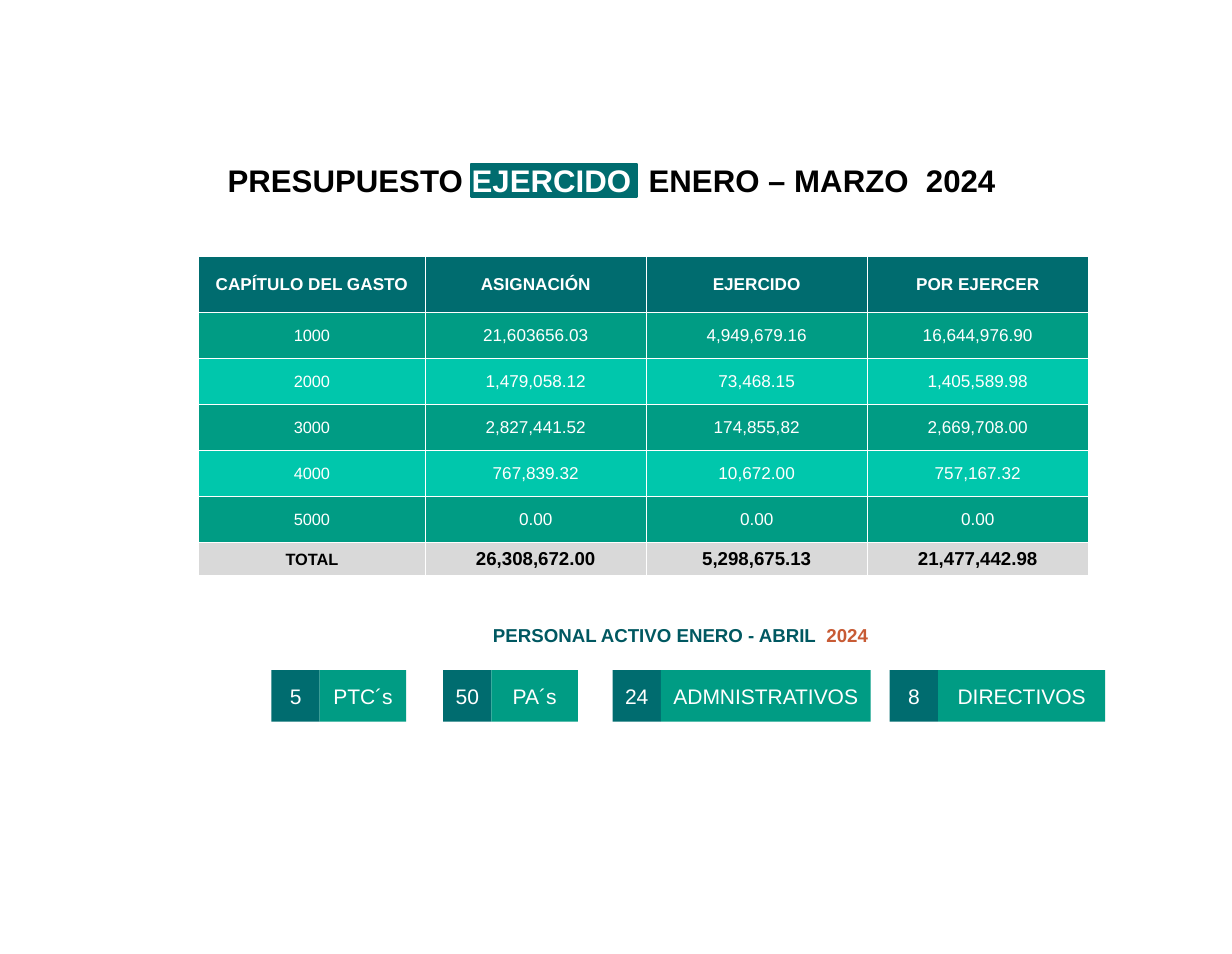
from lxml.etree import SubElement
from pptx import Presentation
from pptx.dml.color import RGBColor
from pptx.enum.shapes import MSO_SHAPE
from pptx.enum.text import MSO_ANCHOR, PP_ALIGN
from pptx.oxml.ns import qn
from pptx.util import Inches, Pt

WHITE, BLACK, GRAY = "FFFFFF", "000000", "D9D9D9"
TEAL, GREEN, MINT = "006C6F", "009C84", "00C7AC"

TITLE = [("PRESUPUESTO ", BLACK), ("EJERCIDO", WHITE), ("  ENERO – MARZO  2024", BLACK)]
STAFF_TITLE = [("PERSONAL ACTIVO ENERO - ABRIL  ", "005861"), ("2024", "C85B35")]
BUDGET = [
    ("CAPÍTULO DEL GASTO", "ASIGNACIÓN", "EJERCIDO", "POR EJERCER"),
    ("1000", "21,603656.03", "4,949,679.16", "16,644,976.90"),
    ("2000", "1,479,058.12", "73,468.15", "1,405,589.98"),
    ("3000", "2,827,441.52", "174,855,82", "2,669,708.00"),
    ("4000", "767,839.32", "10,672.00", "757,167.32"),
    ("5000", "0.00", "0.00", "0.00"),
    ("TOTAL", "26,308,672.00", "5,298,675.13", "21,477,442.98"),
]
COLUMNS = [2.02] + [1.97] * 3
ROWS = [0.5] + [0.41] * 5 + [0.3]
STAFF = [
    ("5", "PTC´s", 2.42, 0.77),
    ("50", "PA´s", 3.95, 0.77),
    ("24", "ADMNISTRATIVOS", 5.46, 1.87),
    ("8", "DIRECTIVOS", 7.93, 1.49),
]
STAFF_TOP, STAFF_HEIGHT, COUNT_WIDTH = 5.97, 0.46, 0.43


def color(value):
    return RGBColor.from_string(value)


def assign(target, values):
    for name, value in values.items():
        setattr(target, name, value)


def write(para, spans, size, bold=False, align=PP_ALIGN.CENTER):
    para.alignment = align
    for text, tint in spans:
        span = para.add_run()
        span.text = text
        assign(span.font, {"name": "Arial", "size": Pt(size), "bold": bold})
        span.font.color.rgb = color(tint)


def add_box(page, area, fill):
    box = page.shapes.add_shape(MSO_SHAPE.RECTANGLE, *map(Inches, area))
    box.shadow.inherit = False
    box.fill.solid()
    box.fill.fore_color.rgb = color(fill)
    box.line.fill.background()
    return box


def add_heading(page, area, spans, size, align, anchor):
    frame = page.shapes.add_textbox(*map(Inches, area)).text_frame
    assign(frame, {"word_wrap": True, "vertical_anchor": anchor})
    write(frame.paragraphs[0], spans, size, True, align)


def add_borders(cell):
    properties = cell._tc.get_or_add_tcPr()
    for side in ("lnL", "lnR", "lnT", "lnB"):
        line = SubElement(properties, qn(f"a:{side}"), w=str(Pt(0.5)))
        SubElement(SubElement(line, qn("a:solidFill")), qn("a:srgbClr"), val=WHITE)


def cell_style(row, column):
    if row == 0:
        return TEAL, WHITE, 11, True
    if row == len(BUDGET) - 1:
        return GRAY, BLACK, 12 if column else 10.5, True
    return (GREEN if row % 2 else MINT), WHITE, 11 if column else 10.5, False


def add_budget(page):
    area = (1.77, 2.28, sum(COLUMNS), sum(ROWS))
    table = page.shapes.add_table(len(ROWS), len(COLUMNS), *map(Inches, area)).table
    for column, width in zip(table.columns, COLUMNS):
        column.width = Inches(width)
    for row, height in zip(table.rows, ROWS):
        row.height = Inches(height)
    margins = {f"margin_{side}": Inches(0.01) for side in ("left", "right", "top")}
    for row, values in enumerate(BUDGET):
        for column, value in enumerate(values):
            fill, tint, size, bold = cell_style(row, column)
            cell = table.cell(row, column)
            assign(cell, {**margins, "margin_bottom": 0, "vertical_anchor": MSO_ANCHOR.MIDDLE})
            add_borders(cell)
            cell.fill.solid()
            cell.fill.fore_color.rgb = color(fill)
            write(cell.text_frame.paragraphs[0], [(value, tint)], size, bold)


def add_staff(page):
    margins = {f"margin_{side}": 0 for side in ("left", "right", "top", "bottom")}
    for count, label, left, width in STAFF:
        parts = [(count, left, COUNT_WIDTH, TEAL), (label, left + COUNT_WIDTH, width, GREEN)]
        for text, start, span_width, fill in parts:
            box = add_box(page, (start, STAFF_TOP, span_width, STAFF_HEIGHT), fill)
            assign(box.text_frame, {**margins, "vertical_anchor": MSO_ANCHOR.MIDDLE})
            write(box.text_frame.paragraphs[0], [(text, WHITE)], 13.5)


def main():
    deck = Presentation()
    assign(deck, {"slide_width": Inches(10.98), "slide_height": Inches(8.5)})
    page = deck.slides.add_slide(deck.slide_layouts[6])
    highlight = add_box(page, (4.2, 1.46, 1.48, 0.29), TEAL)
    highlight.line.color.rgb = color(TEAL)
    highlight.line.width = Pt(1.5)
    add_heading(page, (1.93, 1.39, 7.13, 0.44), TITLE, 20, PP_ALIGN.LEFT, MSO_ANCHOR.TOP)
    add_budget(page)
    add_heading(page, (3.61, 5.43, 4.91, 0.46), STAFF_TITLE, 12, PP_ALIGN.CENTER, MSO_ANCHOR.MIDDLE)
    add_staff(page)
    deck.save("out.pptx")


if __name__ == "__main__":
    main()
